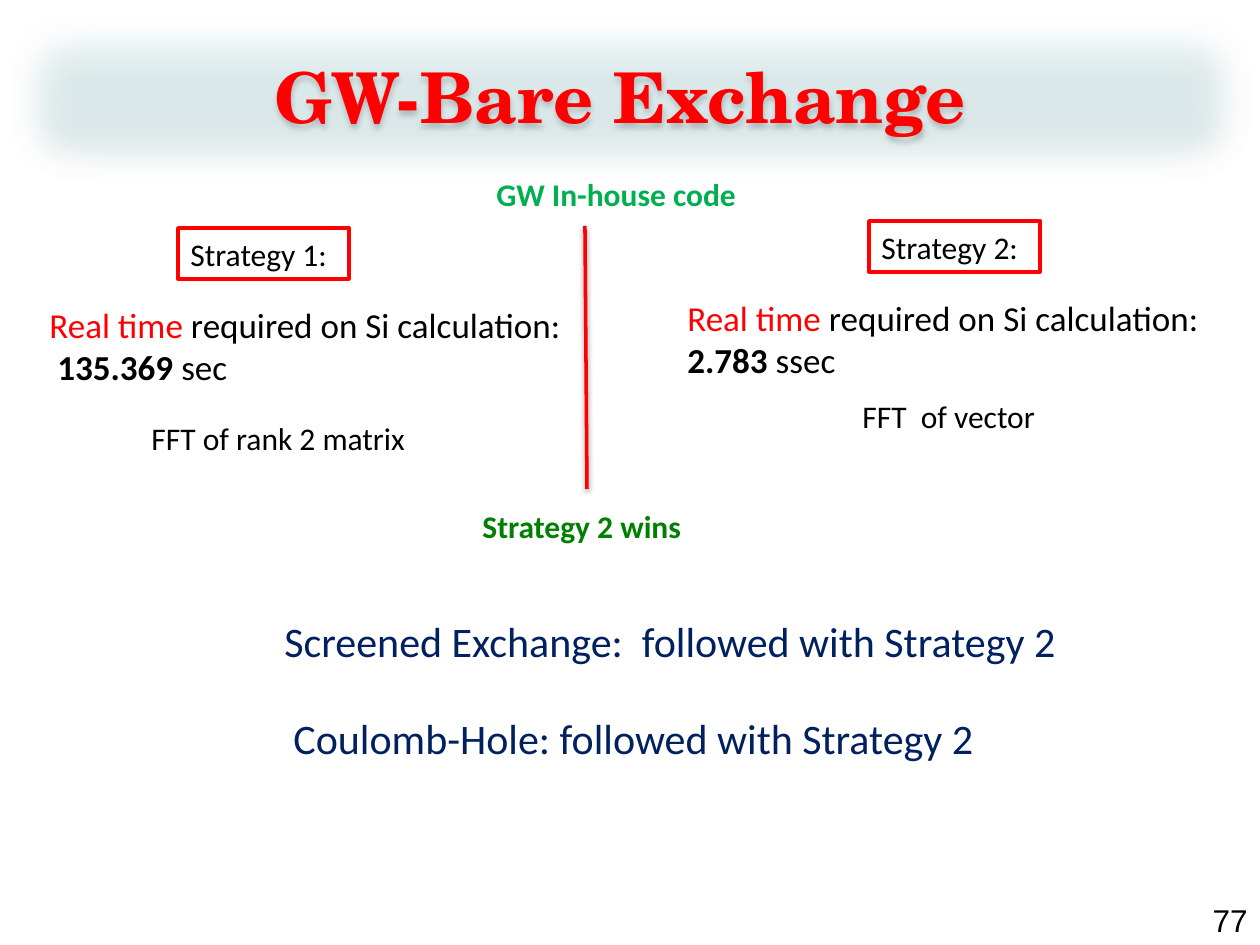
import dataclasses

import pptx
import pptx.dml.color
import pptx.enum.shapes
import pptx.enum.text
import pptx.oxml
import pptx.oxml.ns
import pptx.util

EMU_PER_PX = 914400 / 126


@dataclasses.dataclass(frozen=True)
class Theme:
    """Colours, fonts and type sizes of the slide."""

    red: str = "FF0000"
    black: str = "000000"
    light_green: str = "00B050"
    dark_green: str = "008000"
    navy: str = "002060"
    banner: tuple = ("B5E5E9", "D3FBFF")
    body_font: str = "Calibri"
    title_font: str = "TeX Gyre Schola"
    number_font: str = "Arial"
    title: int = 40
    heading: int = 24
    timing: int = 20
    body: int = 18
    line: int = 2


THEME = Theme()


def px(length):
    """Turn pixels into EMU."""
    return pptx.util.Emu(round(length * EMU_PER_PX))


def rgb(value):
    """Turn a hexadecimal string into a colour."""
    return pptx.dml.color.RGBColor.from_string(value)


def format_run(run, size, color, bold=False, font=THEME.body_font):
    """Set the typeface, size, colour and weight of a run."""
    run.font.name = font
    run.font.size = pptx.util.Pt(size)
    run.font.color.rgb = rgb(color)
    run.font.bold = bold


def add_text(slide, box, text, size, color, bold=False, font=THEME.body_font):
    """Place a text box with one formatted line and return its paragraph."""
    shape = slide.shapes.add_textbox(*map(px, box))
    shape.text_frame.word_wrap = True
    shape.text_frame.text = text
    paragraph = shape.text_frame.paragraphs[0]
    format_run(paragraph.runs[0], size, color, bold, font)
    return paragraph


def add_rectangle(slide, box):
    """Place a plain rectangle."""
    kind = pptx.enum.shapes.MSO_SHAPE.RECTANGLE
    return slide.shapes.add_shape(kind, *map(px, box))


def add_effects(shape, opacity, distance, soft_edge=0):
    """Give a shape a downward shadow and, if wanted, soft edges (points)."""
    edge = f'<a:softEdge rad="{pptx.util.Pt(soft_edge)}"/>' if soft_edge else ""
    shape._element.spPr.append(pptx.oxml.parse_xml(
        f'<a:effectLst {pptx.oxml.ns.nsdecls("a")}>'
        f'<a:outerShdw blurRad="{pptx.util.Pt(3.1)}" dist="{pptx.util.Pt(distance)}" '
        f'dir="5400000" rotWithShape="0"><a:srgbClr val="{THEME.black}">'
        f'<a:alpha val="{opacity * 1000}"/></a:srgbClr></a:outerShdw>{edge}</a:effectLst>'))


def add_banner(slide, box, title):
    """Draw the soft translucent title band."""
    banner = add_rectangle(slide, box)
    banner.fill.gradient()
    banner.fill.gradient_angle = 90
    for stop, color in zip(banner.fill.gradient_stops, THEME.banner):
        stop.color.rgb = rgb(color)
    for color in banner._element.spPr.iter(pptx.oxml.ns.qn("a:srgbClr")):
        color.append(pptx.oxml.parse_xml(
            f'<a:alpha {pptx.oxml.ns.nsdecls("a")} val="30000"/>'))
    banner.line.fill.background()
    add_effects(banner, 35, 1.8, soft_edge=25)
    frame = banner.text_frame
    frame.text = title
    frame.vertical_anchor = pptx.enum.text.MSO_ANCHOR.MIDDLE
    paragraph = frame.paragraphs[0]
    paragraph.alignment = pptx.enum.text.PP_ALIGN.CENTER
    format_run(paragraph.runs[0], THEME.title, THEME.red, True, THEME.title_font)


def add_label(slide, box, text):
    """Draw a red outlined strategy label."""
    label = add_rectangle(slide, box)
    label.shadow.inherit = False
    label.fill.background()
    label.line.color.rgb = rgb(THEME.red)
    label.line.width = pptx.util.Pt(THEME.line)
    label.text_frame.word_wrap = True
    label.text_frame.text = text
    paragraph = label.text_frame.paragraphs[0]
    paragraph.alignment = pptx.enum.text.PP_ALIGN.LEFT
    format_run(paragraph.runs[0], THEME.body, THEME.black)


def add_timing(slide, box, seconds, unit):
    """Write the two-line run time of a strategy."""
    shape = slide.shapes.add_textbox(*map(px, box))
    frame = shape.text_frame
    frame.word_wrap = True
    lines = (
        (("Real time ", THEME.red, False),
         ("required on Si calculation:", THEME.black, False)),
        ((seconds, THEME.black, True), (unit, THEME.black, False)),
    )
    for paragraph, pieces in zip((frame.paragraphs[0], frame.add_paragraph()), lines):
        for text, color, bold in pieces:
            run = paragraph.add_run()
            run.text = text
            format_run(run, THEME.timing, color, bold)


def add_strategy(slide, box, label, label_left, seconds, unit, note, note_box):
    """Lay out one strategy column with its label, timing and note."""
    left, top, width = box
    add_label(slide, (left + label_left, top, 171, 51), label)
    add_timing(slide, (left, top + 69, width, 97), seconds, unit)
    note_left, note_top, note_width = note_box
    add_text(slide, (left + note_left, top + note_top, note_width, 51), note,
             THEME.body, THEME.black)


def add_divider(slide, box):
    """Draw the red line between the columns."""
    left, top, width, height = box
    divider = slide.shapes.add_connector(
        pptx.enum.shapes.MSO_CONNECTOR.STRAIGHT,
        px(left), px(top), px(left + width), px(top + height))
    divider.line.color.rgb = rgb(THEME.red)
    divider.line.width = pptx.util.Pt(THEME.line)
    add_effects(divider, 38, 1.6)


def add_comparison(slide, box):
    """Lay out the comparison of both strategies with its verdict."""
    left, top = box
    add_text(slide, (left + 447, top, 275, 51), "GW In-house code",
             THEME.body, THEME.light_green, True)
    add_strategy(slide, (left, top + 59, 551), "Strategy 1:", 141,
                 " 135.369 ", "sec", " FFT of rank 2 matrix", (95, 185, 304))
    add_strategy(slide, (left + 638, top + 52, 542), "Strategy 2:", 194,
                 "2.783 ", "ssec", "FFT  of vector", (175, 170, 208))
    add_divider(slide, (left + 548, top + 57, 2, 263))
    add_text(slide, (left + 433, top + 332, 233, 51), "Strategy 2 wins",
             THEME.body, THEME.dark_green, True)


def add_conclusions(slide, box):
    """Write the two closing lines."""
    left, top, width = box
    add_text(slide, (left, top, width, 63),
             "Screened Exchange:  followed with Strategy 2", THEME.heading, THEME.navy)
    add_text(slide, (left + 9, top + 97, width, 63),
             "Coulomb-Hole: followed with Strategy 2", THEME.heading, THEME.navy)


def add_page_number(slide, box, number):
    """Write the page number at the right."""
    paragraph = add_text(slide, box, number, THEME.body, THEME.black,
                         font=THEME.number_font)
    paragraph.alignment = pptx.enum.text.PP_ALIGN.RIGHT


def main():
    """Build and save the slide."""
    presentation = pptx.Presentation()
    presentation.slide_width, presentation.slide_height = px(1260), px(945)
    slide = presentation.slides.add_slide(presentation.slide_layouts[6])
    add_banner(slide, (-15, -11, 1290, 214), "GW-Bare Exchange ")
    add_comparison(slide, (37, 169))
    add_conclusions(slide, (272, 609, 804))
    add_page_number(slide, (1187, 895, 73, 39), "77")
    presentation.save("out.pptx")


if __name__ == "__main__":
    main()
